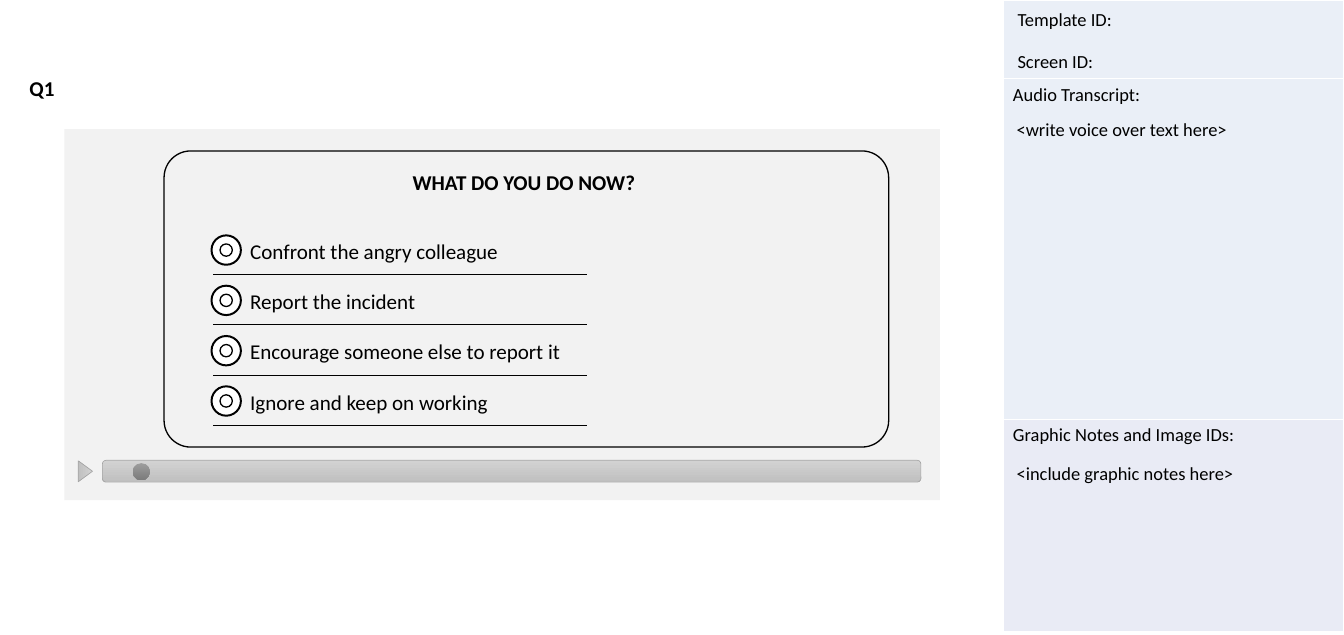
from lxml.etree import SubElement
from pptx import Presentation
from pptx.dml.color import RGBColor
from pptx.enum.shapes import MSO_CONNECTOR, MSO_SHAPE as Shape
from pptx.enum.text import MSO_ANCHOR as Anchor, MSO_AUTO_SIZE as Fit, PP_ALIGN as Align
from pptx.oxml.ns import qn
from pptx.util import Inches, Pt

BLACK = RGBColor(0x00, 0x00, 0x00)
WHITE = RGBColor(0xFF, 0xFF, 0xFF)
PANEL = RGBColor(0xF2, 0xF2, 0xF2)
BLUE = RGBColor(0xEA, 0xEF, 0xF7)
LILAC = RGBColor(0xE9, 0xEB, 0xF5)
EDGE = RGBColor(0xA5, 0xA5, 0xA5)
BAR = (RGBColor(0xD2, 0xD2, 0xD2), RGBColor(0xC0, 0xC0, 0xC0))
KNOB = (RGBColor(0x9D, 0x9D, 0x9D), RGBColor(0x7C, 0x7C, 0x7C))

OPTIONS = [
    "Confront the angry colleague",
    "Report the incident",
    "Encourage someone else to report it",
    "Ignore and keep on working",
]
SIDE = [
    (0.83, "", BLUE),
    (3.59, "Audio Transcript:", BLUE),
    (2.23, "Graphic Notes and Image IDs:", LILAC),
]
LABELS = [
    (10.63, 0.48, "Screen ID:"),
    (10.63, 0.04, "Template ID:"),
    (10.62, 1.19, "<write voice over text here>"),
    (10.62, 4.82, "<include graphic notes here>"),
]


class Screen:
    font = "Calibri"

    def __init__(self, slide):
        self.slide = slide
        self.shapes = slide.shapes

    def label(self, frame, text, size, bold=False, align=Align.LEFT):
        frame.text = text
        para = frame.paragraphs[0]
        para.alignment = align
        for run in para.runs:
            run.font.name = self.font
            run.font.size = Pt(size)
            run.font.bold = bold
            run.font.color.rgb = BLACK

    def flush(self, frame):
        """Take away the insets and hold the text at the top."""
        frame.margin_left = frame.margin_right = 0
        frame.margin_top = frame.margin_bottom = 0
        frame.vertical_anchor = Anchor.TOP
        frame.auto_size = Fit.NONE

    def title(self, x, y, w, h, text):
        box = self.slide.shapes.title
        box.left, box.top = Inches(x), Inches(y)
        box.width, box.height = Inches(w), Inches(h)
        self.flush(box.text_frame)
        self.label(box.text_frame, text, 16, True)

    def text(self, x, y, w, h, text, size):
        box = self.shapes.add_textbox(Inches(x), Inches(y), Inches(w), Inches(h))
        box.text_frame.word_wrap = True
        self.label(box.text_frame, text, size)
        return box.text_frame

    def shape(self, kind, x, y, w, h, fill=None, line=None, width=1):
        """Add a preset shape; a pair of colours makes a downward gradient."""
        item = self.shapes.add_shape(kind, Inches(x), Inches(y), Inches(w), Inches(h))
        item.shadow.inherit = False
        if fill is None:
            item.fill.background()
        elif fill in (BAR, KNOB):
            item.fill.gradient()
            item.fill.gradient_angle = 270
            for stop, tone in zip(item.fill.gradient_stops, fill):
                stop.color.rgb = tone
        else:
            item.fill.solid()
            item.fill.fore_color.rgb = fill
        if line is None:
            item.line.fill.background()
        else:
            item.line.color.rgb = line
            item.line.width = Pt(width)
        return item

    def rule(self, x, y, w):
        line = self.shapes.add_connector(
            MSO_CONNECTOR.STRAIGHT, Inches(x), Inches(y), Inches(x + w), Inches(y))
        line.line.color.rgb = BLACK
        line.line.width = Pt(0.5)
        SubElement(line._element.spPr, qn("a:effectLst"))

    def option(self, x, y, text):
        """Group a radio button, its label and the rule below."""
        self.shapes = self.slide.shapes.add_group_shape().shapes
        self.shape(Shape.OVAL, x, y, 0.31, 0.31, WHITE, BLACK, 1.5)
        self.shape(Shape.OVAL, x + 0.09, y + 0.09, 0.13, 0.13, WHITE, BLACK)
        self.text(x + 0.31, y - 0.02, 7.47, 0.37, text, 16)
        self.rule(x + 0.02, y + 0.41, 3.94)
        self.shapes = self.slide.shapes

    def player(self):
        self.shapes = self.slide.shapes.add_group_shape().shapes
        self.shape(Shape.ROUNDED_RECTANGLE, 1.08, 4.85, 8.63, 0.23, BAR, EDGE, 0.5)
        play = self.shape(Shape.ISOSCELES_TRIANGLE, 0.79, 4.89, 0.22, 0.15, BAR, EDGE, 0.5)
        play.rotation = 90
        self.shape(Shape.OVAL, 1.4, 4.88, 0.18, 0.18, KNOB)
        self.shapes = self.slide.shapes

    def table(self, x, y, w, rows):
        high = sum(row[0] for row in rows)
        grid = self.shapes.add_table(
            len(rows), 1, Inches(x), Inches(y), Inches(w), Inches(high)).table
        grid.horz_banding = False
        for i, (tall, text, fill) in enumerate(rows):
            grid.rows[i].height = Inches(tall)
            cell = grid.cell(i, 0)
            cell.fill.solid()
            cell.fill.fore_color.rgb = fill
            self.label(cell.text_frame, text, 14)


def main():
    deck = Presentation()
    deck.slide_width, deck.slide_height = Inches(14.17), Inches(6.69)
    screen = Screen(deck.slides.add_slide(deck.slide_layouts.get_by_name("Title Only")))

    screen.title(0.31, 0.79, 6.41, 0.38, "Q1")
    screen.table(10.58, 0, 3.59, SIDE)
    for x, y, text in LABELS:
        screen.text(x, y, 3.54, 0.34, text, 14)

    screen.shape(Shape.RECTANGLE, 0.68, 1.36, 9.23, 3.91, PANEL)
    screen.player()
    card = screen.shape(Shape.ROUNDED_RECTANGLE, 1.73, 1.59, 7.64, 3.12, line=BLACK)
    card.adjustments[0] = 0.09
    for i, text in enumerate(OPTIONS):
        screen.option(2.23, 2.48 + 0.53 * i, text)

    ask = screen.text(1.79, 1.78, 7.47, 0.45, "", 16)
    screen.flush(ask)
    screen.label(ask, "WHAT DO YOU DO NOW?", 16, True, Align.CENTER)
    deck.save("out.pptx")


if __name__ == "__main__":
    main()
